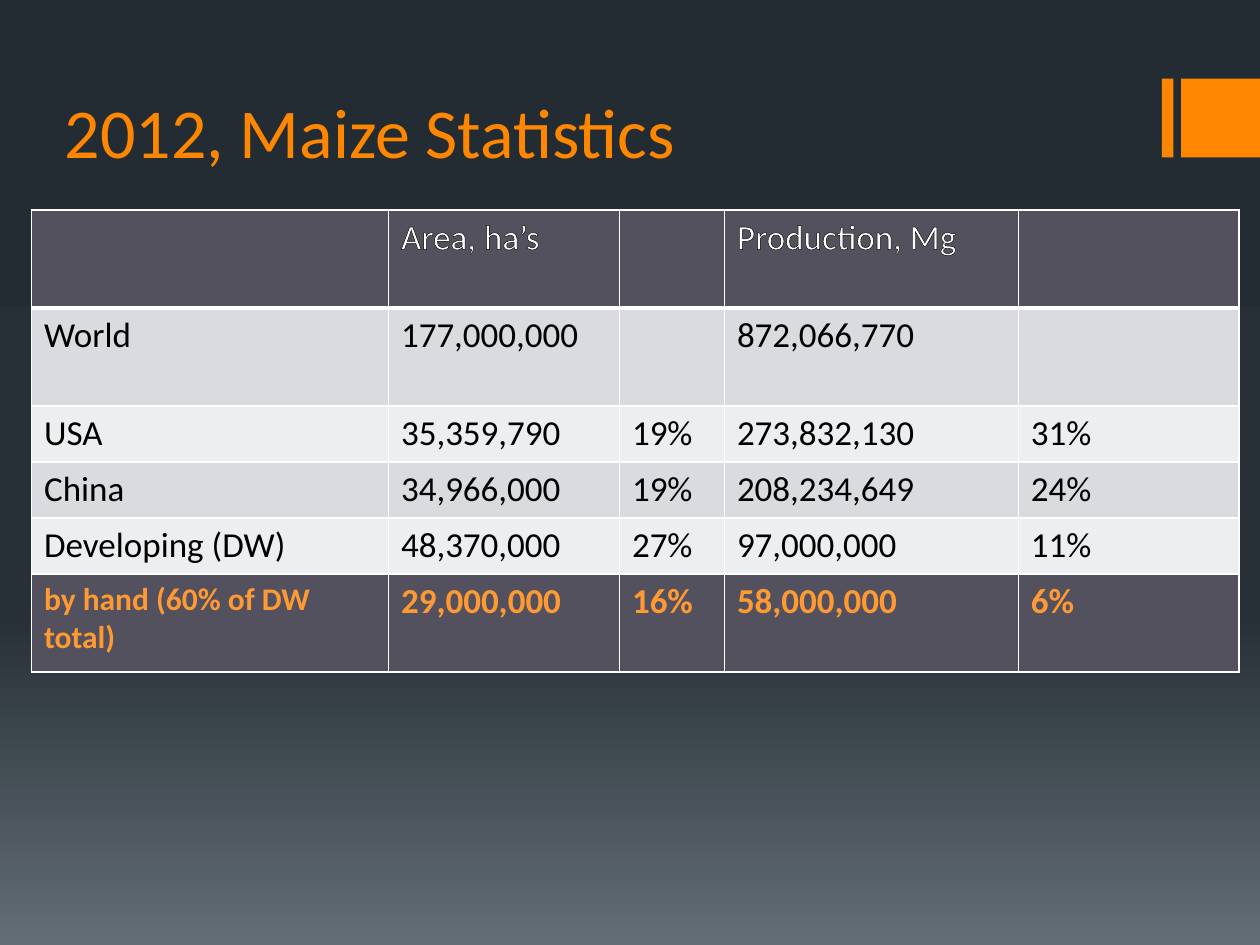
from copy import deepcopy
from pptx import Presentation
from pptx.dml.color import RGBColor
from pptx.enum.shapes import MSO_SHAPE
from pptx.enum.text import MSO_ANCHOR
from pptx.oxml import parse_xml
from pptx.oxml.ns import nsdecls, qn
from pptx.util import Pt


def color(value):
    return RGBColor.from_string(value)


def line_xml(tag, value, width):
    return parse_xml(
        f'<a:{tag} {nsdecls("a")} w="{Pt(width)}"><a:solidFill>'
        f'<a:srgbClr val="{value}"/></a:solidFill></a:{tag}>'
    )


ORANGE, DARK, WHITE = "FF8600", "53515E", "FFFFFF"

presentation = Presentation()
presentation.slide_width, presentation.slide_height = Pt(720), Pt(540)
slide = presentation.slides.add_slide(presentation.slide_layouts[6])

background = slide.background.fill
background.gradient()
background.gradient_angle = 270
stop_list = next(slide.element.iter(qn("a:gsLst")))
stop_list.append(deepcopy(stop_list[-1]))
gradient = [(0, "242C33"), (0.65, "273037"), (1, "636D76")]
for stop, (position, value) in zip(background.gradient_stops, gradient):
    stop.position = position
    stop.color.rgb = color(value)

for left, width in [(664, 6.5), (675, 45)]:
    bar = slide.shapes.add_shape(
        MSO_SHAPE.RECTANGLE, Pt(left), Pt(45), Pt(width), Pt(45)
    )
    bar.shadow.inherit = False
    bar.fill.solid()
    bar.fill.fore_color.rgb = color(ORANGE)
    bar.line.fill.background()

title = slide.shapes.add_textbox(Pt(30), Pt(18), Pt(605), Pt(84)).text_frame
title.word_wrap = True
title.vertical_anchor = MSO_ANCHOR.BOTTOM
run = title.paragraphs[0].add_run()
run.text = "2012, Maize Statistics"
run.font.name, run.font.size = "Calibri", Pt(40)
run.font.color.rgb = color(ORANGE)

rows = [
    ["", "Area, ha’s", "", "Production, Mg", ""],
    ["World", "177,000,000", "", "872,066,770", ""],
    ["USA", "35,359,790", "19%", "273,832,130", "31%"],
    ["China", "34,966,000", "19%", "208,234,649", "24%"],
    ["Developing (DW)", "48,370,000", "27%", "97,000,000", "11%"],
    ["by hand (60% of DW total)", "29,000,000", "16%", "58,000,000", "6%"],
]
column_widths = [204, 132, 60, 168, 126]
row_heights = [56, 56, 32, 32, 32, 56]
row_fills = [DARK, "D9DBDE", "EDEEEF", "D9DBDE", "EDEEEF", DARK]
text_colors = [WHITE] + ["000000"] * 4 + ["FF9933"]
last = len(rows) - 1

table = slide.shapes.add_table(
    len(rows), len(column_widths), Pt(18), Pt(120),
    Pt(sum(column_widths)), Pt(sum(row_heights)),
).table
table.horz_banding = False
for column, width in zip(table.columns, column_widths):
    column.width = Pt(width)

for row_index, texts in enumerate(rows):
    table.rows[row_index].height = Pt(row_heights[row_index])
    for column_index, text in enumerate(texts):
        cell = table.cell(row_index, column_index)
        properties = cell._tc.get_or_add_tcPr()
        for side in ("lnL", "lnR", "lnT", "lnB"):
            thick = row_index == 0 and side == "lnB"
            properties.append(line_xml(side, WHITE, 3 if thick else 1))
        cell.fill.solid()
        cell.fill.fore_color.rgb = color(row_fills[row_index])
        if not text:
            continue
        run = cell.text_frame.paragraphs[0].add_run()
        run.text = text
        run.font.name = "Calibri"
        run.font.size = Pt(18 if row_index == last and column_index == 0 else 20)
        run.font.bold = row_index == last
        run.font.color.rgb = color(text_colors[row_index])
        if row_index == 0:
            run._r.get_or_add_rPr().insert(0, line_xml("ln", "000000", 0.75))

presentation.save("out.pptx")
